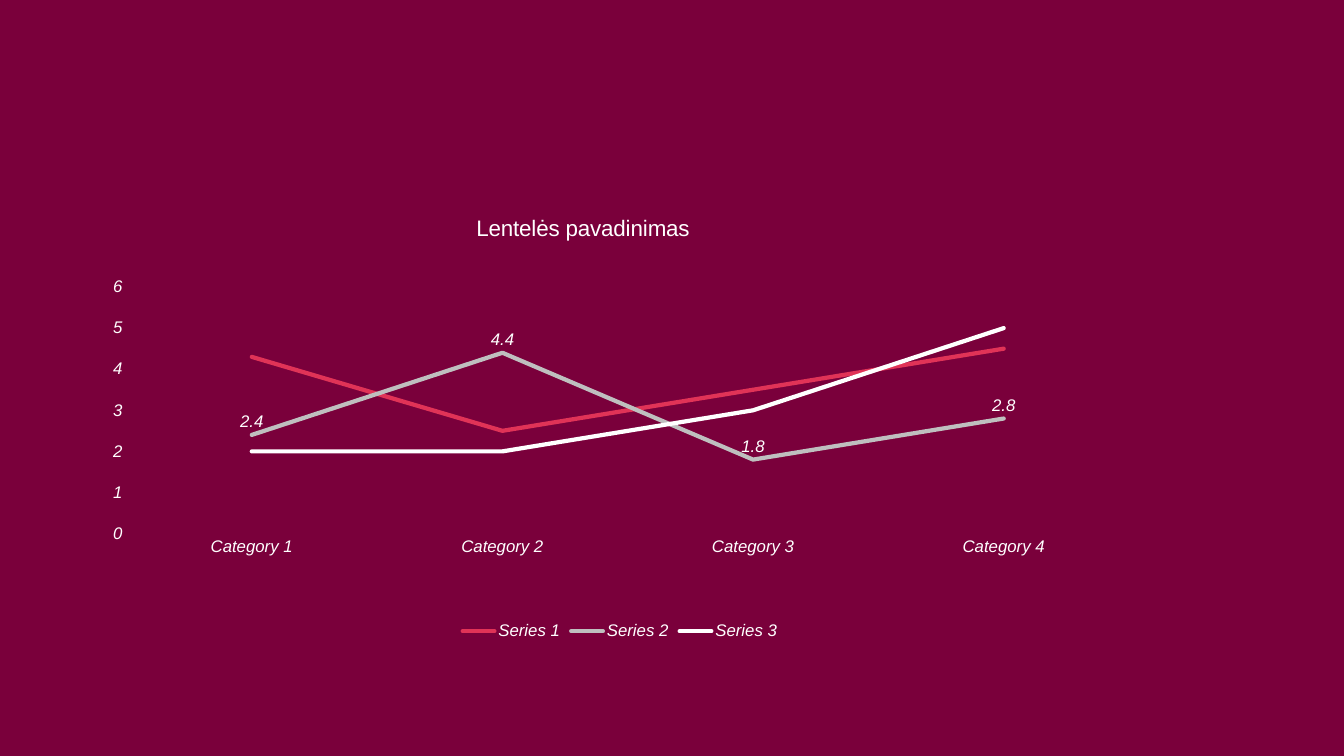
"""Build a slide with one line chart on a dark red ground."""
from dataclasses import dataclass

from lxml.etree import SubElement
from pptx import Presentation
from pptx.chart.chart import Chart
from pptx.chart.data import CategoryChartData
from pptx.dml.color import RGBColor
from pptx.enum.chart import (XL_CHART_TYPE, XL_LABEL_POSITION,
                             XL_LEGEND_POSITION, XL_TICK_MARK)
from pptx.oxml.ns import qn
from pptx.oxml.xmlchemy import BaseOxmlElement
from pptx.slide import Slide
from pptx.text.text import Font
from pptx.util import Pt

COLORS = {"ground": "7A003B", "red": "E03357", "gray": "BFBFBF", "white": "FFFFFF"}


@dataclass
class Trend:
    name: str
    vals: tuple[float, ...]
    color: str
    labels: bool = False


TRENDS = [
    Trend("Series 1", (4.3, 2.5, 3.5, 4.5), "red"),
    Trend("Series 2", (2.4, 4.4, 1.8, 2.8), "gray", True),
    Trend("Series 3", (2, 2, 3, 5), "white"),
]


def tint(name: str) -> RGBColor:
    return RGBColor.from_string(COLORS[name])


def style(font: Font, size: float = 12, italic: bool = True) -> None:
    font.name = "Arial"
    font.size = Pt(size)
    font.bold = False
    font.italic = italic
    font.color.rgb = tint("white")


def place(parent: BaseOxmlElement, index: int, **marks: str | float) -> None:
    layout = parent.find(qn("c:layout"))
    if layout is None:
        layout = SubElement(parent, qn("c:layout"))
        parent.insert(index, layout)
    manual = SubElement(layout, qn("c:manualLayout"))
    for key, value in marks.items():
        SubElement(manual, qn(f"c:{key}")).set("val", str(value))


def add_title(chart: Chart, text: str) -> None:
    chart.has_title = True
    title = chart.chart_title
    title.include_in_layout = False
    title.text_frame.text = text
    style(title.text_frame.paragraphs[0].font, 16, False)
    place(title._element, 1, xMode="edge", yMode="edge", x=0.36, y=0.02)


def set_axes(chart: Chart) -> None:
    for axis in (chart.category_axis, chart.value_axis):
        axis.has_major_gridlines = False
        axis.major_tick_mark = axis.minor_tick_mark = XL_TICK_MARK.NONE
        axis.format.line.fill.background()
        style(axis.tick_labels.font)
    chart.value_axis.minimum_scale = 0
    chart.value_axis.maximum_scale = 6
    chart.value_axis.major_unit = 1


def set_lines(chart: Chart) -> None:
    for line, trend in zip(chart.plots[0].series, TRENDS):
        line.smooth = False
        line.format.line.width = Pt(3)
        line.format.line.color.rgb = tint(trend.color)
        line._element.find(f"{qn('c:spPr')}/{qn('a:ln')}").set("cap", "rnd")
        if trend.labels:
            labels = line.data_labels
            labels.show_value = True
            labels.position = XL_LABEL_POSITION.ABOVE
            style(labels.font)


def add_chart(slide: Slide) -> None:
    data = CategoryChartData()
    data.categories = [f"Category {n}" for n in range(1, 5)]
    for trend in TRENDS:
        data.add_series(trend.name, trend.vals)
    chart = slide.shapes.add_chart(XL_CHART_TYPE.LINE, Pt(66.24), Pt(143.28),
                                   Pt(753.12), Pt(316.8), data).chart
    style(chart.font)
    chart.plots[0].vary_by_categories = False
    add_title(chart, "Lentelės pavadinimas")
    set_axes(chart)
    set_lines(chart)
    chart.has_legend = True
    chart.legend.position = XL_LEGEND_POSITION.BOTTOM
    chart.legend.include_in_layout = False
    style(chart.legend.font)
    area = chart._chartSpace.chart.plotArea
    place(area, 0, layoutTarget="inner", xMode="edge", yMode="edge",
          x=0.032, y=0.195, w=0.951, h=0.556)


def main() -> None:
    deck = Presentation()
    deck.slide_width, deck.slide_height = Pt(960), Pt(540)
    slide = deck.slides.add_slide(deck.slide_layouts[6])
    slide.background.fill.solid()
    slide.background.fill.fore_color.rgb = tint("ground")
    add_chart(slide)
    deck.save("out.pptx")


if __name__ == "__main__":
    main()
